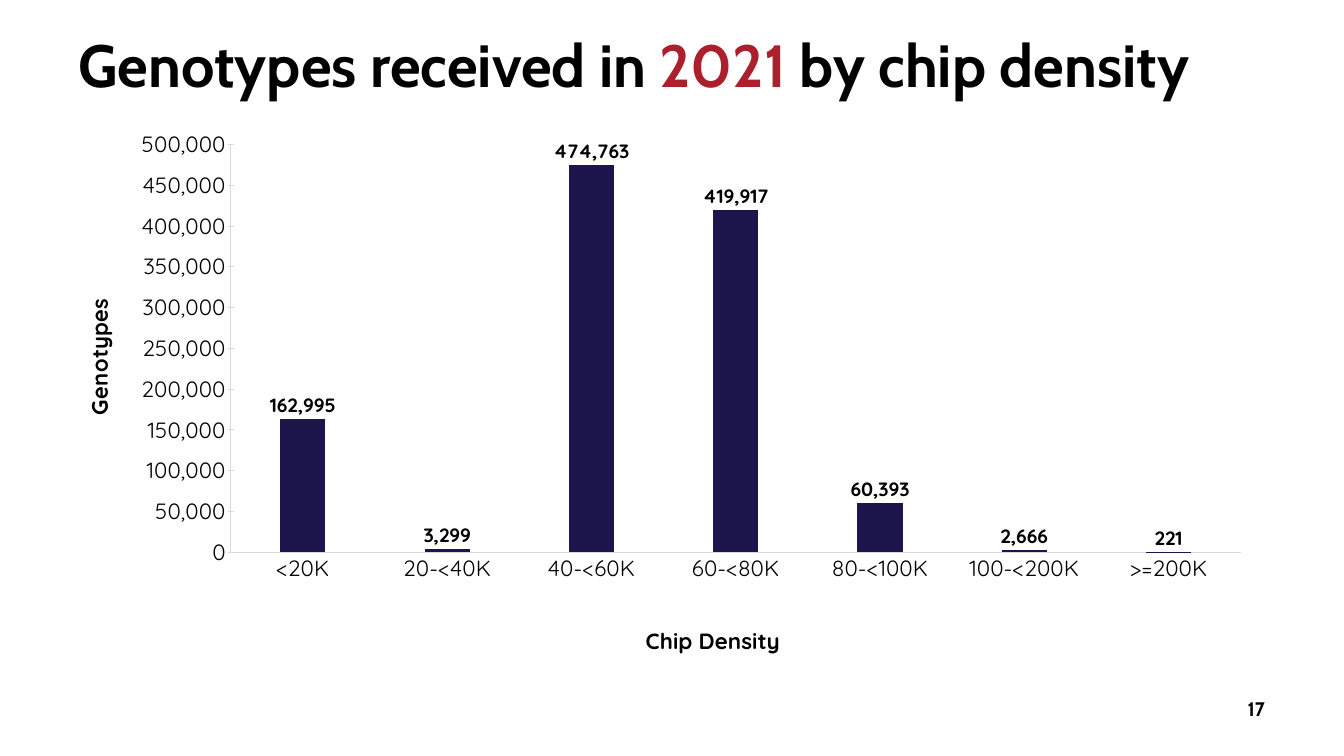
"""Build a slide charting the genotypes received in 2021 by chip density."""
import pptx
import pptx.chart.data
import pptx.dml.color
import pptx.enum.chart
import pptx.enum.text
import pptx.oxml
import pptx.oxml.ns
import pptx.util

Pt = pptx.util.Pt
BLACK, RED, NAVY, GREY = "000000", "AC1F2D", "1B154B", "D9D9D9"


def color(hex_string):
    """Return the RGB colour of a hex string."""
    return pptx.dml.color.RGBColor.from_string(hex_string)


def set_layout(parent, position, **settings):
    """Give a chart part a manual layout at a child position."""
    for old in parent.xpath("./c:layout"):
        parent.remove(old)
    values = "".join(f'<c:{key} val="{value}"/>' for key, value in settings.items())
    parent.insert(position, pptx.oxml.parse_xml(
        f'<c:layout {pptx.oxml.ns.nsdecls("c")}><c:manualLayout>{values}</c:manualLayout></c:layout>'))


deck = pptx.Presentation()
deck.slide_width, deck.slide_height = Pt(1918.8), Pt(1080)
slide = deck.slides.add_slide(deck.slide_layouts[6])

top, middle = pptx.enum.text.MSO_ANCHOR.BOTTOM, pptx.enum.text.MSO_ANCHOR.MIDDLE
left_align, right_align = pptx.enum.text.PP_ALIGN.LEFT, pptx.enum.text.PP_ALIGN.RIGHT
title_runs = [("Genotypes received in ", BLACK), ("2021", RED), (" by chip density", BLACK)]
texts = [
    ((95, 54, 1728, 97.2), top, left_align, 85, title_runs),
    ((1375.2, 983.5, 447.8, 57.6), middle, right_align, 28, [("17", BLACK)]),
]
for bounds, anchor, alignment, size, runs in texts:
    frame = slide.shapes.add_textbox(*map(Pt, bounds)).text_frame
    frame.word_wrap = True
    frame.vertical_anchor = anchor
    frame.margin_left = frame.margin_right = Pt(17.28)
    frame.margin_top = frame.margin_bottom = Pt(8.64)
    paragraph = frame.paragraphs[0]
    paragraph.alignment = alignment
    for words, shade in runs:
        run = paragraph.add_run()
        run.text = words
        run.font.name, run.font.size, run.font.bold = "Cabin", Pt(size), True
        run.font.color.rgb = color(shade)

densities = pptx.chart.data.CategoryChartData(number_format="#,##0")
densities.categories = ["<20K", "20-<40K", "40-<60K", "60-<80K", "80-<100K", "100-<200K", ">=200K"]
densities.add_series("Series 1", [162995, 3299, 474763, 419917, 60393, 2666, 221])
chart = slide.shapes.add_chart(
    pptx.enum.chart.XL_CHART_TYPE.COLUMN_CLUSTERED,
    Pt(95), Pt(172.8), Pt(1710.7), Pt(772.6), densities).chart
chart.has_title = chart.has_legend = False
chart.font.name, chart.font.size = "Quicksand", Pt(10)
chart.font.color.rgb = color(BLACK)

plot = chart.plots[0]
plot.vary_by_categories = False
plot.gap_width, plot.overlap = 219, -27
genotypes = plot.series[0]
genotypes.format.fill.solid()
genotypes.format.fill.fore_color.rgb = color(NAVY)
labels = genotypes.data_labels
labels.show_value = True
labels.number_format, labels.number_format_is_linked = "#,##0", False
labels.position = pptx.enum.chart.XL_LABEL_POSITION.OUTSIDE_END
labels.font.name, labels.font.size, labels.font.bold = "Quicksand", Pt(28), True
labels.font.color.rgb = color(BLACK)

ticks = pptx.enum.chart.XL_TICK_MARK
axes = [
    (chart.category_axis, "Chip Density", ticks.NONE, 0.48, 0.94),
    (chart.value_axis, "Genotypes", ticks.CROSS, 0.01, 0.33),
]
for axis, caption, tick, x, y in axes:
    axis.has_major_gridlines = False
    axis.major_tick_mark, axis.minor_tick_mark = tick, ticks.NONE
    axis.format.line.color.rgb = color(GREY)
    axis.format.line.width = Pt(0.75)
    axis.axis_title.text_frame.text = caption
    caption_font = axis.axis_title.text_frame.paragraphs[0].runs[0].font
    for font, bold in ((axis.tick_labels.font, False), (caption_font, True)):
        font.name, font.size, font.bold = "Quicksand", Pt(32), bold
        font.color.rgb = color(BLACK)
    set_layout(axis.axis_title.element, 1, xMode="edge", yMode="edge", x=x, y=y)

chart.value_axis.minimum_scale, chart.value_axis.maximum_scale = 0, 500000
chart.value_axis.major_unit = 50000
chart.value_axis.tick_labels.number_format = "#,##0"
chart.value_axis.tick_labels.number_format_is_linked = False
set_layout(chart.element.xpath(".//c:plotArea")[0], 0, layoutTarget="inner",
           xMode="edge", yMode="edge", x=0.137, y=0.044, w=0.843, h=0.767)

deck.save("out.pptx")
